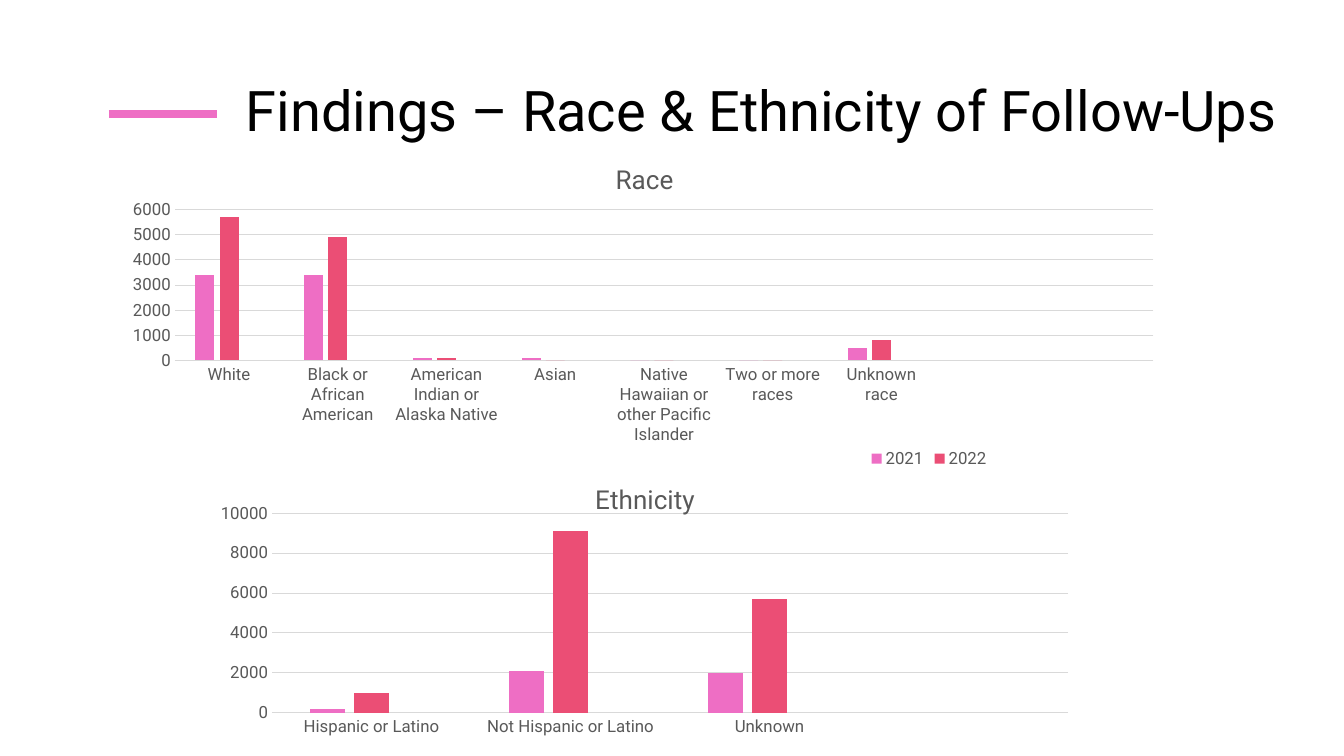
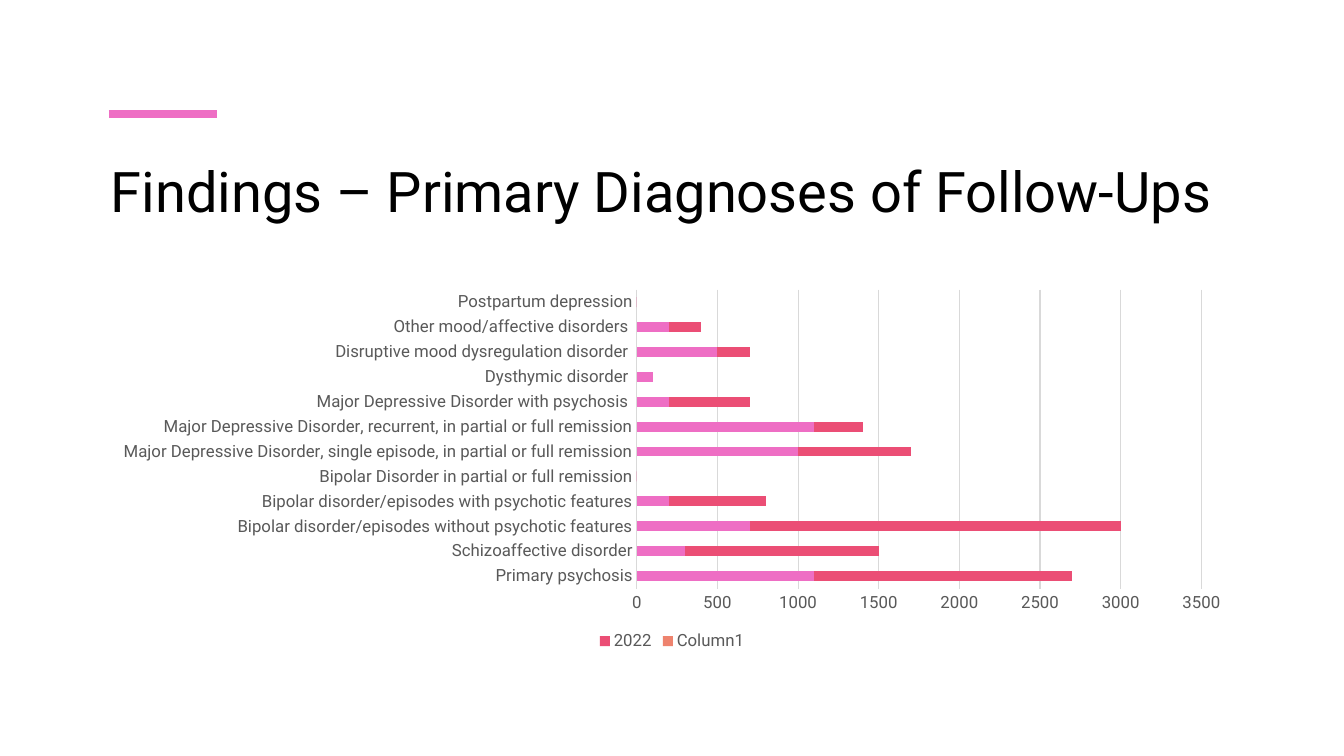
import pptx
import pptx.util
import pptx.chart.data
import pptx.dml.color
import pptx.enum.chart
import pptx.enum.shapes
import pptx.oxml
import pptx.oxml.ns

Inches = pptx.util.Inches
Pt = pptx.util.Pt
RGBColor = pptx.dml.color.RGBColor
Kind = pptx.enum.chart.XL_CHART_TYPE
qn = pptx.oxml.ns.qn

PINK = RGBColor(0xEE, 0x6E, 0xC4)
ROSE = RGBColor(0xEB, 0x4E, 0x75)
CORAL = RGBColor(0xEE, 0x83, 0x6E)
BLACK = RGBColor(0, 0, 0)
GRAY = RGBColor(0x59, 0x59, 0x59)
GRID = RGBColor(0xD9, 0xD9, 0xD9)
FONT = "Roboto"

RACES = ["White", "Black or African American",
         "American Indian or Alaska Native", "Asian",
         "Native Hawaiian or other Pacific Islander",
         "Two or more races", "Unknown race", "", ""]
RACE_ROWS = [("2021", [3400, 3400, 100, 100, 0, 0, 500, None, None]),
             ("2022", [5700, 4900, 100, 0, 0, 0, 800, None, None]),
             ("Series 3", [None] * 9)]

ETHNIC = ["Hispanic or Latino", "Not Hispanic or Latino", "Unknown", ""]
ETHNIC_ROWS = [("Series 1", [200, 2100, 2000, None]),
               ("Series 2", [1000, 9100, 5700, None]),
               ("Series 3", [None] * 4)]

CAUSES = ["Primary psychosis", "Schizoaffective disorder",
          "Bipolar disorder/episodes without psychotic features",
          "Bipolar disorder/episodes with psychotic features",
          "Bipolar Disorder in partial or full remission",
          "Major Depressive Disorder, single episode, in partial or full remission",
          "Major Depressive Disorder, recurrent, in partial or full remission",
          "Major Depressive Disorder with psychosis ", "Dysthymic disorder ",
          "Disruptive mood dysregulation disorder ",
          "Other mood/affective disorders ", "Postpartum depression"]
CAUSE_ROWS = [
    ("2021", [1100, 300, 700, 200, 0, 1000, 1100, 200, 100, 500, 200, 0]),
    ("2022", [1600, 1200, 2300, 600, 0, 700, 300, 500, 0, 200, 200, 0]),
    ("Column1", [None] * 12)]


def style(font, size, color):
    font.name, font.size = FONT, Pt(size)
    font.color.rgb = color


def write(frame, text, size=40, color=BLACK):
    frame.text = text
    style(frame.paragraphs[0].runs[0].font, size, color)


def node(tag, **attrs):
    item = pptx.oxml.parse_xml(
        f"<c:{tag} {pptx.oxml.ns.nsdecls('c')}/>")
    for key, val in attrs.items():
        item.set(key, str(val))
    return item


def place(parent, after, x, y, w=None, h=None):
    """Give a chart part a fixed position, in fractions of the chart."""
    for old in parent.findall(qn("c:layout")):
        parent.remove(old)
    layout, manual = node("layout"), node("manualLayout")
    layout.append(manual)
    if w:
        manual.append(node("layoutTarget", val="inner"))
    manual.append(node("xMode", val="edge"))
    manual.append(node("yMode", val="edge"))
    for tag, val in zip("xywh", (x, y, w, h)):
        if val is not None:
            manual.append(node(tag, val=val))
    if after is None:
        parent.insert(0, layout)
    else:
        after.addnext(layout)


def add_head(slide, text, left, top, width):
    """Accent bar and slide title."""
    bar = slide.shapes.add_connector(
        pptx.enum.shapes.MSO_CONNECTOR.STRAIGHT,
        Inches(1.08), Inches(1.13), Inches(2.15), Inches(1.13))
    bar.line.color.rgb, bar.line.width = PINK, Pt(6)
    bar._element.spPr.append(pptx.oxml.parse_xml(
        f"<a:effectLst {pptx.oxml.ns.nsdecls('a')}/>"))
    box = slide.shapes.add_textbox(
        Inches(left), Inches(top), Inches(width), Inches(1.3))
    box.text_frame.word_wrap = True
    write(box.text_frame, text)


def add_axes(chart, top, step):
    """Plain axes with light grid lines."""
    cat, val = chart.category_axis, chart.value_axis
    for axis in (cat, val):
        axis.major_tick_mark = pptx.enum.chart.XL_TICK_MARK.NONE
        axis.minor_tick_mark = pptx.enum.chart.XL_TICK_MARK.NONE
        style(axis.tick_labels.font, 12, GRAY)
    cat.has_major_gridlines = False
    val.has_major_gridlines = True
    for line in (cat.format.line, val.major_gridlines.format.line):
        line.color.rgb, line.width = GRID, Pt(0.75)
    val.format.line.fill.background()
    val.minimum_scale, val.maximum_scale, val.major_unit = 0, top, step


def add_key(chart, spot=None):
    """Legend at the bottom, without the entry of the empty series."""
    chart.has_legend = True
    key = chart.legend
    key.position = pptx.enum.chart.XL_LEGEND_POSITION.BOTTOM
    key.include_in_layout = False
    style(key.font, 12, GRAY)
    entry = node("legendEntry")
    entry.append(node("idx", val=2))
    entry.append(node("delete", val=1))
    key._element.find(qn("c:legendPos")).addnext(entry)
    if spot:
        place(key._element, entry, *spot)


def add_graph(slide, box, kind, cats, rows, top, step, gap, lap,
              title=None, spot=None, plot=None):
    data = pptx.chart.data.CategoryChartData()
    data.categories = cats
    for name, vals in rows:
        data.add_series(name, vals)
    chart = slide.shapes.add_chart(kind, *map(Inches, box), data).chart
    style(chart.font, 12, GRAY)
    bars = chart.plots[0]
    bars.gap_width, bars.overlap = gap, lap
    bars.vary_by_categories = False
    for row, color in zip(bars.series, (PINK, ROSE, CORAL)):
        row.format.fill.solid()
        row.format.fill.fore_color.rgb = color
    add_axes(chart, top, step)
    chart.has_legend = False
    chart.has_title = bool(title)
    if title:
        head = chart.chart_title
        write(head.text_frame, title, size=18.6, color=GRAY)
        head.text_frame.paragraphs[0].runs[0].font.bold = False
        place(head._element, head._element.find(qn("c:tx")), *spot)
    if plot:
        area = chart._chartSpace.find(qn("c:chart")).find(qn("c:plotArea"))
        place(area, None, *plot)
    return chart


def add_race(slide):
    add_head(slide, "Findings – Race & Ethnicity of Follow-Ups", 2.34, 0.7, 10.9)
    race = add_graph(slide, (1.1, 1.35, 10.55, 3.48), Kind.COLUMN_CLUSTERED,
                     RACES, RACE_ROWS, 6000, 1000, 219, -27, title="Race",
                     spot=(0.47, 0.06), plot=(0.06, 0.21, 0.92, 0.43))
    add_key(race, (0.71, 0.88))
    add_graph(slide, (1.82, 4.68, 8.78, 2.75), Kind.COLUMN_CLUSTERED,
              ETHNIC, ETHNIC_ROWS, 10000, 2000, 219, -27, title="Ethnicity",
              spot=(0.46, 0.02), plot=(0.1, 0.15, 0.9, 0.72))


def add_cause(slide):
    add_head(slide, "Findings – Primary Diagnoses of Follow-Ups", 1, 1.5, 11.33)
    chart = add_graph(slide, (1, 2.8, 11.33, 3.7), Kind.BAR_STACKED,
                      CAUSES, CAUSE_ROWS, 3500, 500, 150, 100)
    add_key(chart)


def main():
    deck = pptx.Presentation()
    deck.slide_width, deck.slide_height = Inches(13.33), Inches(7.5)
    for build in (add_race, add_cause):
        build(deck.slides.add_slide(deck.slide_layouts[6]))
    deck.save("out.pptx")


if __name__ == "__main__":
    main()
